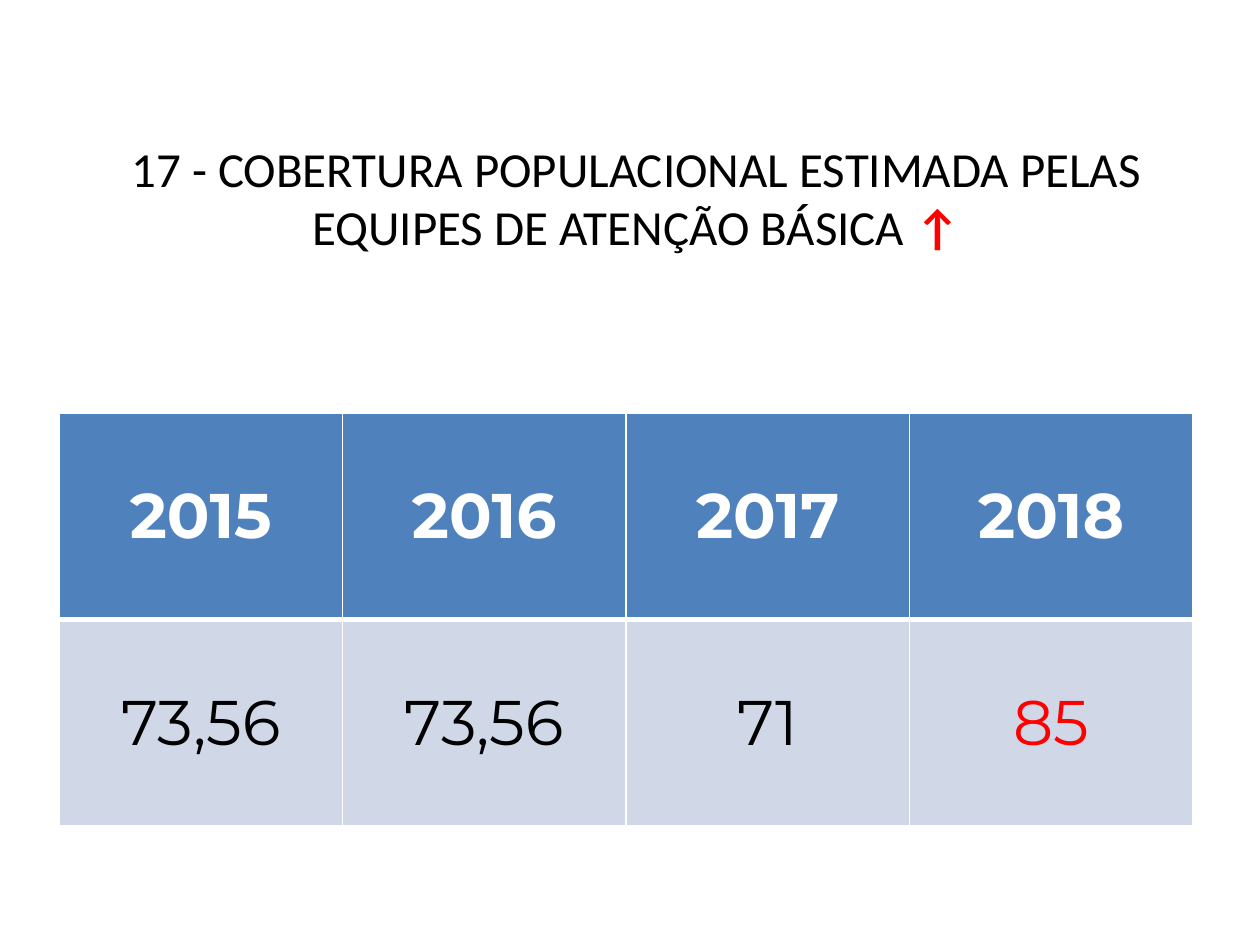
from lxml.etree import SubElement
from pptx import Presentation
from pptx.dml.color import RGBColor
from pptx.enum.text import MSO_ANCHOR, PP_ALIGN
from pptx.oxml.ns import qn
from pptx.util import Emu, Pt

WHITE = RGBColor(0xFF, 0xFF, 0xFF)
BLACK = RGBColor(0x00, 0x00, 0x00)
RED = RGBColor(0xFF, 0x00, 0x00)
BLUE = RGBColor(0x4F, 0x81, 0xBD)
PALE_BLUE = RGBColor(0xD0, 0xD8, 0xE8)

COVERAGE = [("2015", "73,56"), ("2016", "73,56"), ("2017", "71"), ("2018", "85")]


def px(length):
    """Convert pixels, 126 to the inch, to EMU."""
    return Emu(round(length * 914400 / 126))


def add_text(para, text, font="Calibri", size=28, color=BLACK, bold=False):
    """Add a formatted span to a centred paragraph."""
    para.alignment = PP_ALIGN.CENTER
    span = para.add_run()
    span.text = text
    span.font.name = font
    span.font.size = Pt(size)
    span.font.bold = bold
    span.font.color.rgb = color


def add_title(page):
    """Add the indicator title with its red arrow."""
    box = page.shapes.add_textbox(px(69), px(20), px(1134), px(354))
    frame = box.text_frame
    frame.word_wrap = True
    frame.vertical_anchor = MSO_ANCHOR.MIDDLE
    para = frame.paragraphs[0]
    add_text(para, "17 - COBERTURA POPULACIONAL ESTIMADA PELAS EQUIPES DE ATENÇÃO BÁSICA ")
    add_text(para, "↑", color=RED, bold=True)


def set_borders(cell, **widths):
    """Draw white cell borders, with widths in points by side."""
    properties = cell._tc.get_or_add_tcPr()
    for side in "LRTB":
        line = SubElement(properties, qn(f"a:ln{side}"), w=str(Pt(widths.get(side, 1))))
        fill = SubElement(line, qn("a:solidFill"))
        SubElement(fill, qn("a:srgbClr"), val=str(WHITE))


def fill_cell(cell, text, fill, color, bold=False, **widths):
    """Fill one table cell with its text, background and borders."""
    set_borders(cell, **widths)
    cell.fill.solid()
    cell.fill.fore_color.rgb = fill
    cell.vertical_anchor = MSO_ANCHOR.MIDDLE
    add_text(cell.text_frame.paragraphs[0], text, font="Montserrat", size=36, color=color, bold=bold)


def add_coverage_table(page):
    """Add the table of yearly coverage, with the last year in red."""
    frame = page.shapes.add_table(2, len(COVERAGE), px(59), px(413), px(1134), px(413))
    table = frame.table
    for column, (year, value) in enumerate(COVERAGE):
        color = RED if column == len(COVERAGE) - 1 else BLACK
        fill_cell(table.cell(0, column), year, BLUE, WHITE, bold=True, B=3)
        fill_cell(table.cell(1, column), value, PALE_BLUE, color, T=3)


def main():
    """Build and save the deck."""
    deck = Presentation()
    deck.slide_width, deck.slide_height = px(1260), px(945)
    page = deck.slides.add_slide(deck.slide_layouts[6])
    add_title(page)
    add_coverage_table(page)
    deck.save("out.pptx")


if __name__ == "__main__":
    main()
